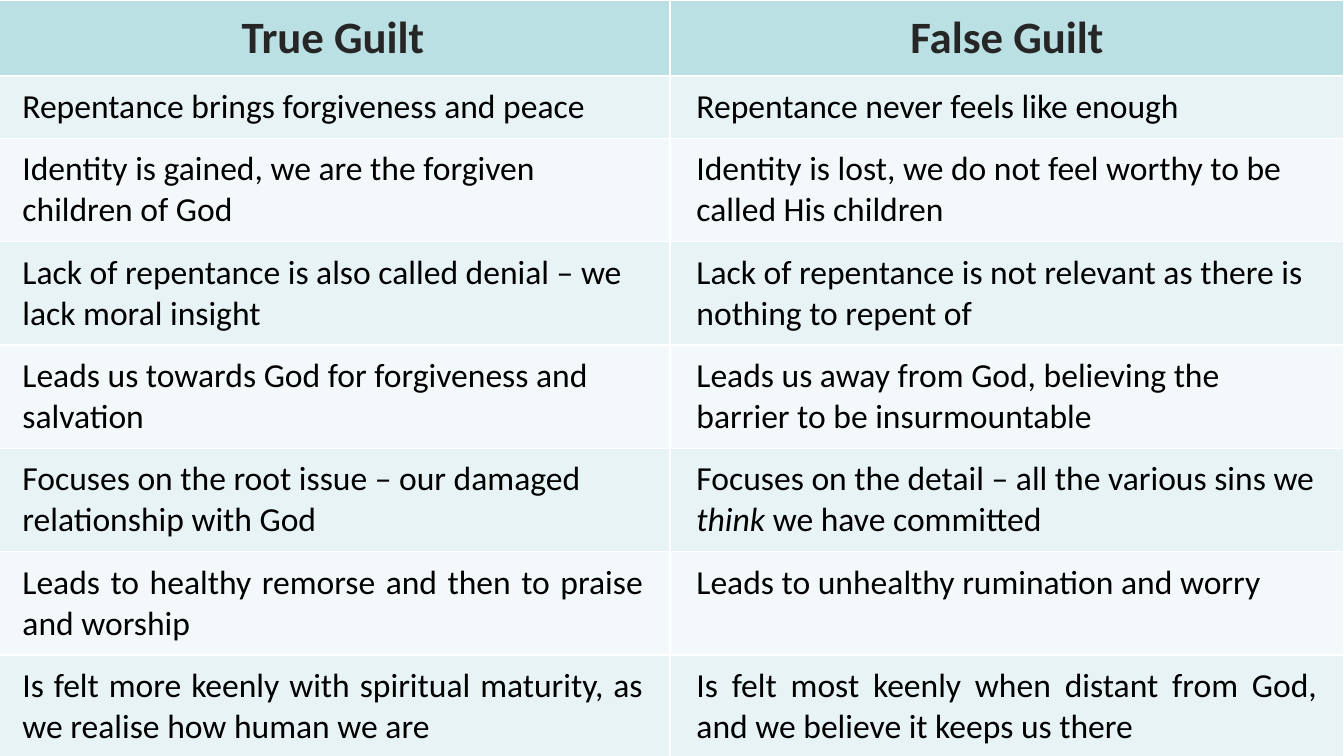
import pptx
import pptx.util
import pptx.dml.color
import pptx.enum.text
import pptx.oxml

ALIGN = pptx.enum.text.PP_ALIGN
LEFT, CENTER, JUSTIFY = ALIGN.LEFT, ALIGN.CENTER, ALIGN.JUSTIFY
NS = "http://schemas.openxmlformats.org/drawingml/2006/main"


def color(hex_string):
    return pptx.dml.color.RGBColor.from_string(hex_string)


class ComparisonDeck:
    """Holds the style and the current slide."""

    font = "Calibri"
    header_fill, bands = "BBE0E3", ("E7F3F4", "F3F9FA")
    header_ink, body_ink, rule = "262626", "000000", "FFFFFF"
    header_size, body_size = 24, 18
    inset_x, inset_y = 14.2, 5.7  # points

    def __init__(self, width, height):
        self.deck = pptx.Presentation()
        self.deck.slide_width = pptx.util.Inches(width)
        self.deck.slide_height = pptx.util.Inches(height)

    def add_slide(self, background):
        self.slide = self.deck.slides.add_slide(self.deck.slide_layouts[6])
        fill = self.slide.background.fill
        fill.solid()
        fill.fore_color.rgb = color(background)

    def across(self, share):
        return round(self.deck.slide_width * share)

    def down(self, share):
        return round(self.deck.slide_height * share)

    def border(self, cell):
        properties = cell._tc.get_or_add_tcPr()
        for side in "LRTB":
            properties.append(pptx.oxml.parse_xml(
                f'<a:ln{side} xmlns:a="{NS}" w="{pptx.util.Pt(1)}">'
                f'<a:solidFill><a:srgbClr val="{self.rule}"/></a:solidFill>'
                f'</a:ln{side}>'))

    def write_cell(self, cell, runs, align, is_header, fill):
        self.border(cell)
        cell.fill.solid()
        cell.fill.fore_color.rgb = color(fill)
        cell.margin_left = cell.margin_right = pptx.util.Pt(self.inset_x)
        cell.margin_top = cell.margin_bottom = pptx.util.Pt(self.inset_y)
        paragraph = cell.text_frame.paragraphs[0]
        paragraph.alignment = align
        for text, italic in runs:
            run = paragraph.add_run()
            run.text = text
            run.font.name = self.font
            run.font.size = pptx.util.Pt(self.header_size if is_header else self.body_size)
            run.font.bold = is_header
            run.font.italic = italic
            run.font.color.rgb = color(self.header_ink if is_header else self.body_ink)

    def add_comparison(self, rows, left, top, width, row_shares):
        comparison = self.slide.shapes.add_table(
            len(rows), 2, self.across(left), self.down(top),
            self.across(width), self.down(sum(row_shares))).table
        for column in comparison.columns:
            column.width = self.across(width / 2)
        for index, (align, *statements) in enumerate(rows):
            comparison.rows[index].height = self.down(row_shares[index])
            fill = self.bands[(index - 1) % 2] if index else self.header_fill
            for side, statement in enumerate(statements):
                runs = [(statement, False)] if isinstance(statement, str) else statement
                self.write_cell(comparison.cell(index, side), runs, align, index == 0, fill)


# Alignment, true guilt, false guilt
guilt_rows = [
    (CENTER, "True Guilt", "False Guilt"),
    (LEFT, "Repentance brings forgiveness and peace",
     "Repentance never feels like enough"),
    (LEFT, "Identity is gained, we are the forgiven children of God",
     "Identity is lost, we do not feel worthy to be called His children"),
    (LEFT, "Lack of repentance is also called denial – we lack moral insight",
     "Lack of repentance is not relevant as there is nothing to repent of"),
    (LEFT, "Leads us towards God for forgiveness and salvation",
     "Leads us away from God, believing the barrier to be insurmountable"),
    (LEFT, "Focuses on the root issue – our damaged relationship with God",
     [("Focuses on the detail – all the various sins we ", False),
      ("think", True), (" we have committed", False)]),
    (JUSTIFY, "Leads to healthy remorse and then to praise and worship",
     "Leads to unhealthy rumination and worry"),
    (JUSTIFY, "Is felt more keenly with spiritual maturity, as we realise how human we are",
     "Is felt most keenly when distant from God, and we believe it keeps us there"),
]

# Header, one single-line row, then equal two-line rows
header_share, single_share, double_share = 0.1, 0.08, 0.13
row_shares = [header_share, single_share] + [double_share] * (len(guilt_rows) - 2)

# Widescreen slide, 16 to 9
slide_width = 10
guilt = ComparisonDeck(slide_width, slide_width * 9 / 16)
guilt.add_slide("000000")
guilt.add_comparison(guilt_rows, left=-0.003, top=0, width=1.003, row_shares=row_shares)
guilt.deck.save("out.pptx")
